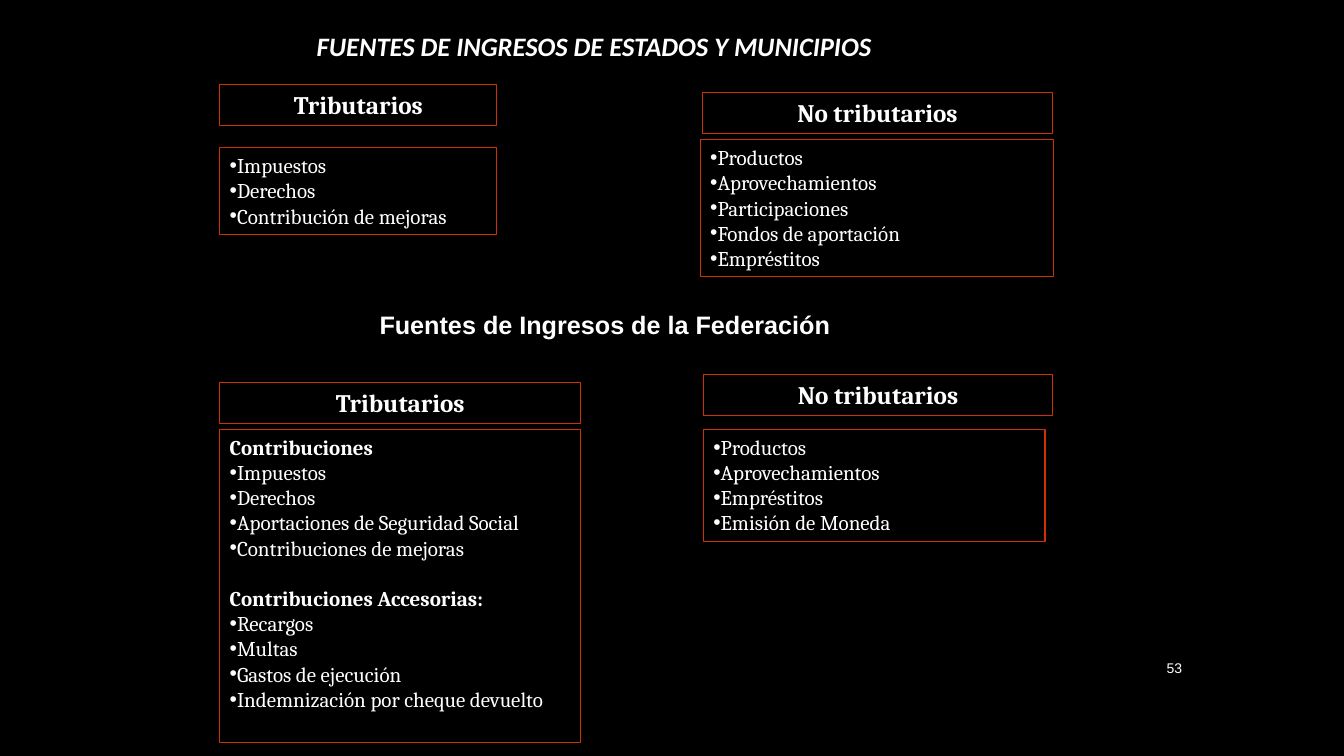
from dataclasses import dataclass

from lxml import etree
from pptx import Presentation
from pptx.dml.color import RGBColor
from pptx.enum import shapes, text
from pptx.oxml import ns
from pptx.util import Pt


@dataclass(frozen=True)
class Theme:
    background = RGBColor(0, 0, 0)
    ink = RGBColor(255, 255, 255)
    border = RGBColor(0xCC, 0x33, 0)
    border_width = Pt(0.75)
    title = {"name": "Calibri", "size": Pt(19), "bold": True, "italic": True}
    subtitle = {"name": "Arial", "size": Pt(18), "bold": True}
    heading = {"name": "Cambria", "size": Pt(18), "bold": True}
    item = {"name": "Cambria", "size": Pt(15), "bold": False}
    group = {"name": "Cambria", "size": Pt(15), "bold": True}
    number = {"name": "Arial", "size": Pt(10)}
    group_gap = Pt(18)


THEME = Theme()
HEADING_HEIGHT = 29.5
LEFT, MIDDLE = text.PP_ALIGN.LEFT, text.MSO_ANCHOR.MIDDLE


def write(paragraph, words, style, align=LEFT):
    paragraph.alignment = align
    run = paragraph.add_run()
    run.text = words
    for attribute, value in style.items():
        setattr(run.font, attribute, value)
    run.font.color.rgb = THEME.ink


def add_bullet(paragraph):
    properties = paragraph._p.get_or_add_pPr()
    properties.set("marL", "0")
    properties.set("indent", "0")
    etree.SubElement(properties, ns.qn("a:buFont"), typeface="Arial")
    etree.SubElement(properties, ns.qn("a:buChar"), char="•")


def place_title(slide, box):
    title = slide.shapes.title
    title.left, title.top, title.width, title.height = map(Pt, box)
    title.text_frame.vertical_anchor = MIDDLE
    write(title.text_frame.paragraphs[0],
          "FUENTES DE INGRESOS DE ESTADOS Y MUNICIPIOS", THEME.title)


def place_label(slide, box, words, style, align=LEFT):
    frame = slide.shapes.add_textbox(*map(Pt, box)).text_frame
    frame.word_wrap = True
    frame.vertical_anchor = MIDDLE
    write(frame.paragraphs[0], words, style, align)


def framed_box(slide, box):
    panel = slide.shapes.add_shape(shapes.MSO_SHAPE.RECTANGLE, *map(Pt, box))
    panel.shadow.inherit = False
    panel.fill.background()
    panel.line.color.rgb = THEME.border
    panel.line.width = THEME.border_width
    panel.text_frame.word_wrap = True
    panel.text_frame.vertical_anchor = text.MSO_ANCHOR.TOP
    return panel.text_frame


def place_heading(slide, box, words):
    frame = framed_box(slide, box)
    write(frame.paragraphs[0], words, THEME.heading, text.PP_ALIGN.CENTER)


def place_list(slide, box, groups):
    """Each group is a (name or None, items) pair."""
    frame = framed_box(slide, box)
    lines = [(words, words == name, index > 0)
             for index, (name, items) in enumerate(groups)
             for words in ([name] if name else []) + items]
    for position, (words, is_name, is_later) in enumerate(lines):
        paragraph = frame.add_paragraph() if position else frame.paragraphs[0]
        write(paragraph, words, THEME.group if is_name else THEME.item)
        if not is_name:
            add_bullet(paragraph)
        elif is_later:
            paragraph.space_before = THEME.group_gap


# Heading (left, top, width), list box, heading words, groups of items
SOURCES = [
    # States and municipalities
    ((157, 60.5, 198), (157, 105.5, 198, 62), "Tributarios",
     [(None, ["Impuestos", "Derechos", "Contribución de mejoras"])]),
    ((501.5, 65.75, 250.5), (500.25, 99.75, 252, 98), "No tributarios",
     [(None, ["Productos", "Aprovechamientos", "Participaciones",
              "Fondos de aportación", "Empréstitos"])]),
    # Federation
    ((157, 273, 257.75), (157, 306.75, 257.75, 224), "Tributarios",
     [("Contribuciones",
       ["Impuestos", "Derechos", "Aportaciones de Seguridad Social",
        "Contribuciones de mejoras"]),
      ("Contribuciones Accesorias:",
       ["Recargos", "Multas", "Gastos de ejecución",
        "Indemnización por cheque devuelto"])]),
    ((502.5, 267.25, 249.5), (502.5, 306.75, 244, 80), "No tributarios",
     [(None, ["Productos", "Aprovechamientos", "Empréstitos",
              "Emisión de Moneda"])]),
]


def main():
    deck = Presentation()
    deck.slide_width, deck.slide_height = Pt(960), Pt(540)
    slide = deck.slides.add_slide(deck.slide_layouts[5])
    slide.background.fill.solid()
    slide.background.fill.fore_color.rgb = THEME.background

    # Titles and slide number
    place_title(slide, (219, 15, 453.5, 36))
    place_label(slide, (264, 213.5, 420, 36),
                "Fuentes de Ingresos de la Federación", THEME.subtitle)
    place_label(slide, (808.5, 462.25, 43, 29.5), "53", THEME.number,
                text.PP_ALIGN.RIGHT)

    # Sources of income
    for heading_box, list_box, heading, groups in SOURCES:
        place_heading(slide, (*heading_box, HEADING_HEIGHT), heading)
        place_list(slide, list_box, groups)

    deck.save("out.pptx")


if __name__ == "__main__":
    main()
